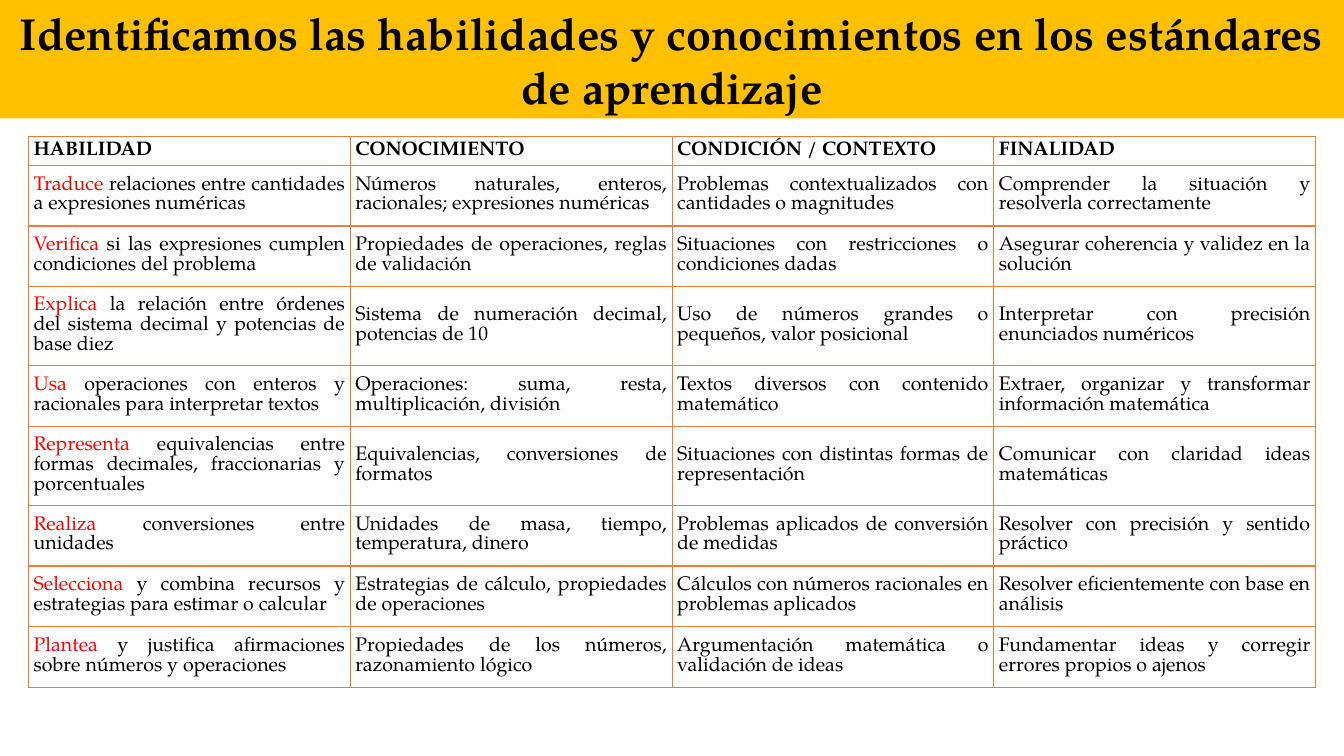
from dataclasses import dataclass
from typing import Any

import pptx
import pptx.dml.color
import pptx.enum.text
import pptx.oxml
import pptx.oxml.ns
import pptx.util

Pt = pptx.util.Pt
RGBColor = pptx.dml.color.RGBColor
Align = pptx.enum.text.PP_ALIGN
Anchor = pptx.enum.text.MSO_ANCHOR


@dataclass(frozen=True)
class Theme:
    font: str = "TeX Gyre Pagella"
    title_size: float = 32
    table_size: float = 14
    line_spacing: float = 1.0
    border_width: float = 1
    text: str = "000000"
    verb: str = "FF0000"
    band: str = "FFC000"
    border: str = "ED7D31"


@dataclass(frozen=True)
class Standard:
    verb: str
    skill: str
    knowledge: str
    context: str
    purpose: str
    height: float = 43.4


THEME = Theme()
TALL = 56.4
HEADER_HEIGHT = 20.4
TITLE = "Identificamos las habilidades y conocimientos en los estándares de aprendizaje"
HEADINGS = ["HABILIDAD", "CONOCIMIENTO", "CONDICIÓN / CONTEXTO", "FINALIDAD"]
STANDARDS = [
    Standard("Traduce", " relaciones entre cantidades a expresiones numéricas",
             "Números naturales, enteros, racionales; expresiones numéricas",
             "Problemas contextualizados con cantidades o magnitudes",
             "Comprender la situación y resolverla correctamente"),
    Standard("Verifica", " si las expresiones cumplen condiciones del problema",
             "Propiedades de operaciones, reglas de validación",
             "Situaciones con restricciones o condiciones dadas",
             "Asegurar coherencia y validez en la solución"),
    Standard("Explica", " la relación entre órdenes del sistema decimal y potencias de base diez",
             "Sistema de numeración decimal, potencias de 10",
             "Uso de números grandes o pequeños, valor posicional",
             "Interpretar con precisión enunciados numéricos", TALL),
    Standard("Usa", " operaciones con enteros y racionales para interpretar textos",
             "Operaciones: suma, resta, multiplicación, división",
             "Textos diversos con contenido matemático",
             "Extraer, organizar y transformar información matemática"),
    Standard("Representa", " equivalencias entre formas decimales, fraccionarias y porcentuales",
             "Equivalencias, conversiones de formatos",
             "Situaciones con distintas formas de representación",
             "Comunicar con claridad ideas matemáticas", TALL),
    Standard("Realiza", " conversiones entre unidades",
             "Unidades de masa, tiempo, temperatura, dinero",
             "Problemas aplicados de conversión de medidas",
             "Resolver con precisión y sentido práctico"),
    Standard("Selecciona", " y combina recursos y estrategias para estimar o calcular",
             "Estrategias de cálculo, propiedades de operaciones",
             "Cálculos con números racionales en problemas aplicados",
             "Resolver eficientemente con base en análisis"),
    Standard("Plantea", " y justifica afirmaciones sobre números y operaciones",
             "Propiedades de los números, razonamiento lógico",
             "Argumentación matemática o validación de ideas",
             "Fundamentar ideas y corregir errores propios o ajenos"),
]


def apply_format(target: Any, values: dict[str, Any]) -> None:
    for name, value in values.items():
        setattr(target, name, value)


def add_span(para: Any, text: str, size: float, color: str, bold: bool) -> None:
    span = para.add_run()
    span.text = text
    apply_format(span.font, {"name": THEME.font, "size": Pt(size), "bold": bold})
    span.font.color.rgb = RGBColor.from_string(color)


def add_title(page: Any) -> None:
    box = page.shapes.title
    apply_format(box, {"left": Pt(0), "top": Pt(0), "width": Pt(960), "height": Pt(84.6)})
    box.fill.solid()
    box.fill.fore_color.rgb = RGBColor.from_string(THEME.band)
    apply_format(box.text_frame, {"word_wrap": True, "vertical_anchor": Anchor.MIDDLE,
                                  "auto_size": pptx.enum.text.MSO_AUTO_SIZE.NONE})
    para = box.text_frame.paragraphs[0]
    apply_format(para, {"alignment": Align.CENTER, "line_spacing": 1.0})
    add_span(para, TITLE, THEME.title_size, THEME.text, True)


def add_borders(cell: Any) -> None:
    properties = cell._tc.get_or_add_tcPr()
    for position, side in enumerate(("lnL", "lnR", "lnT", "lnB")):
        line = pptx.oxml.parse_xml(
            f'<a:{side} {pptx.oxml.ns.nsdecls("a")} w="{Pt(THEME.border_width)}">'
            f'<a:solidFill><a:srgbClr val="{THEME.border}"/></a:solidFill></a:{side}>')
        properties.insert(position, line)


def fill_cell(cell: Any, spans: list[tuple[str, str]], bold: bool) -> None:
    apply_format(cell, {"vertical_anchor": Anchor.MIDDLE,
                        "margin_left": Pt(3.6), "margin_right": Pt(3.6),
                        "margin_top": Pt(2.16), "margin_bottom": Pt(2.16)})
    cell.fill.background()
    add_borders(cell)
    para = cell.text_frame.paragraphs[0]
    apply_format(para, {"alignment": Align.JUSTIFY, "line_spacing": THEME.line_spacing})
    for text, color in spans:
        add_span(para, text, THEME.table_size, color, bold)


def add_standards_table(page: Any) -> None:
    heights = [HEADER_HEIGHT] + [standard.height for standard in STANDARDS]
    table = page.shapes.add_table(len(heights), len(HEADINGS), Pt(20.4), Pt(97.6),
                                  Pt(919.4), Pt(sum(heights))).table
    apply_format(table, {"first_row": False, "horz_banding": False})
    for row, height in zip(table.rows, heights):
        row.height = Pt(height)

    # Header row
    for column, heading in enumerate(HEADINGS):
        fill_cell(table.cell(0, column), [(heading, THEME.text)], True)

    # One row per standard, its verb highlighted
    for row_number, standard in enumerate(STANDARDS, start=1):
        skill = [(standard.verb, THEME.verb), (standard.skill, THEME.text)]
        fill_cell(table.cell(row_number, 0), skill, False)
        others = (standard.knowledge, standard.context, standard.purpose)
        for column, text in enumerate(others, start=1):
            fill_cell(table.cell(row_number, column), [(text, THEME.text)], False)


def main() -> None:
    deck = pptx.Presentation()
    apply_format(deck, {"slide_width": Pt(960), "slide_height": Pt(540)})
    page = deck.slides.add_slide(deck.slide_layouts[5])
    add_title(page)
    add_standards_table(page)
    deck.save("out.pptx")


if __name__ == "__main__":
    main()
